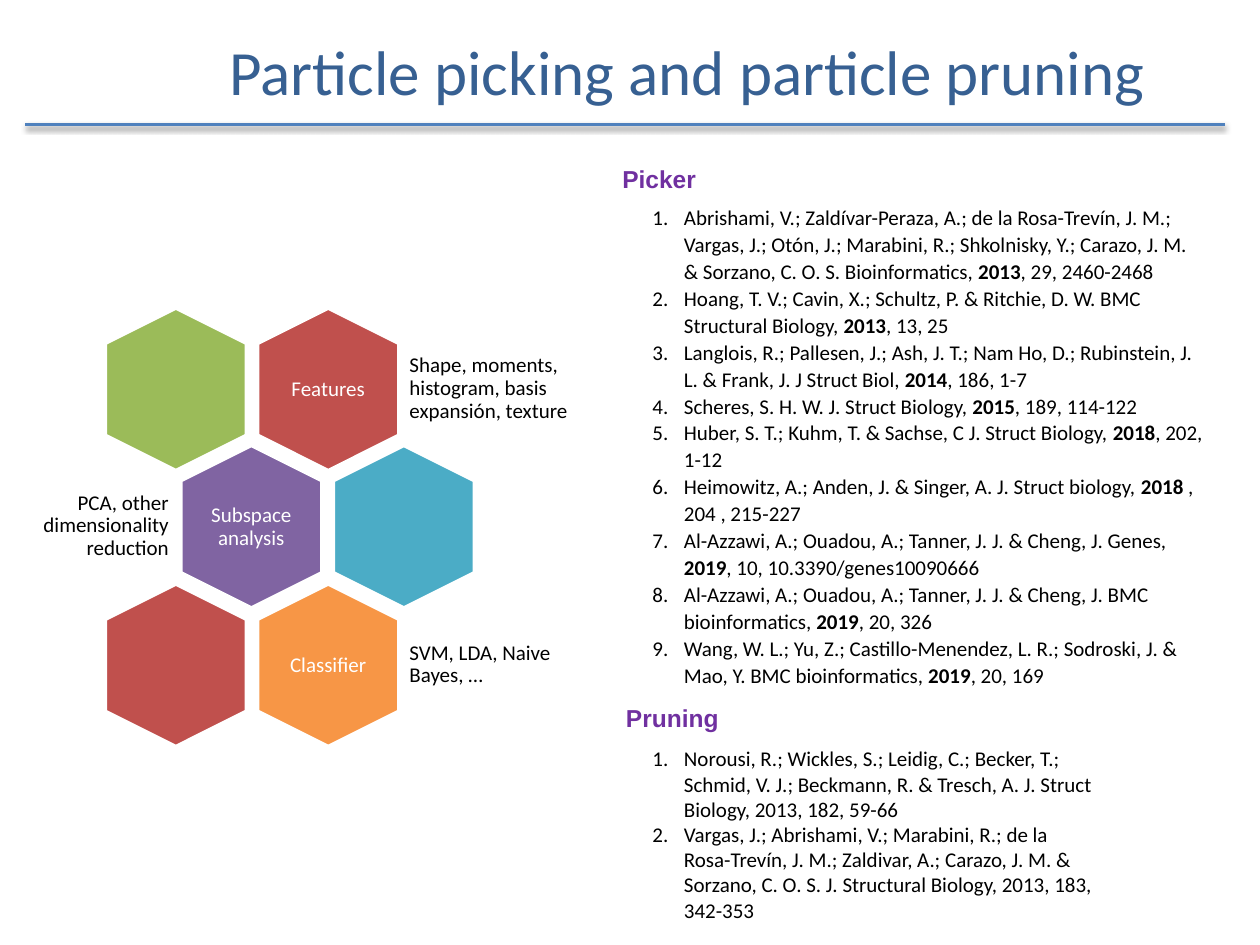
from lxml.etree import SubElement
from pptx import Presentation
from pptx.dml.color import RGBColor
from pptx.enum.shapes import MSO_CONNECTOR, MSO_SHAPE
from pptx.enum.text import MSO_ANCHOR, PP_ALIGN
from pptx.oxml.ns import qn
from pptx.util import Inches, Pt

HEXAGON_WIDTH, HEXAGON_HEIGHT = 1.29, 1.12
COLUMN_STEP = 1.21
ROWS = [(0.75, 2.53), (1.35, 3.62), (0.75, 4.72)]

# row, column, fill, name, details, details side
HEXAGONS = [
    (0, 1, "C0504D", "Features", "Shape, moments, histogram, basis expansión, texture", "right"),
    (0, 0, "9BBB59", None, None, None),
    (1, 0, "8064A2", "Subspace analysis", "PCA, other dimensionality reduction", "left"),
    (1, 1, "4BACC6", None, None, None),
    (2, 1, "F79646", "Classifier", "SVM, LDA, Naive Bayes, …", "right"),
    (2, 0, "C0504D", None, None, None),
]

PICKER_REFERENCES = [
    ("Abrishami, V.; Zaldívar-Peraza, A.; de la Rosa-Trevín, J. M.; Vargas, J.; Otón, J.; "
     "Marabini, R.; Shkolnisky, Y.; Carazo, J. M. & Sorzano, C. O. S. Bioinformatics, ",
     "2013", ", 29, 2460-2468"),
    ("Hoang, T. V.; Cavin, X.; Schultz, P. & Ritchie, D. W. BMC Structural Biology, ",
     "2013", ", 13, 25"),
    ("Langlois, R.; Pallesen, J.; Ash, J. T.; Nam Ho, D.; Rubinstein, J. L. & Frank, J. "
     "J Struct Biol, ", "2014", ", 186, 1-7"),
    ("Scheres, S. H. W. J. Struct Biology, ", "2015", ", 189, 114-122"),
    ("Huber, S. T.; Kuhm, T. & Sachse, C J. Struct Biology, ", "2018", ", 202, 1-12"),
    ("Heimowitz, A.; Anden, J. & Singer, A. J. Struct biology, ", "2018", " , 204 , 215-227"),
    ("Al-Azzawi, A.; Ouadou, A.; Tanner, J. J. & Cheng, J. Genes, ",
     "2019", ", 10, 10.3390/genes10090666"),
    ("Al-Azzawi, A.; Ouadou, A.; Tanner, J. J. & Cheng, J. BMC bioinformatics, ",
     "2019", ", 20, 326"),
    ("Wang, W. L.; Yu, Z.; Castillo-Menendez, L. R.; Sodroski, J. & Mao, Y. "
     "BMC bioinformatics, ", "2019", ", 20, 169"),
]

PRUNING_REFERENCES = [
    ("Norousi, R.; Wickles, S.; Leidig, C.; Becker, T.; Schmid, V. J.; Beckmann, R. & "
     "Tresch, A. J. Struct Biology, 2013, 182, 59-66",),
    ("Vargas, J.; Abrishami, V.; Marabini, R.; de la Rosa-Trevín, J. M.; Zaldivar, A.; "
     "Carazo, J. M. & Sorzano, C. O. S. J. Structural Biology, 2013, 183, 342-353",),
]


def color(value):
    return RGBColor.from_string(value)


class SlideBuilder:
    """Hold the style and the current slide, and add each kind of element."""

    body_font = "Calibri"
    heading_font = "Arial"
    body_size = 12

    def __init__(self, slide):
        self.slide = slide

    def style(self, paragraph, size, value, name=None):
        font = paragraph.font
        font.size, font.name = Pt(size), name or self.body_font
        font.color.rgb = color(value)

    def title(self, text, left, top, width, height):
        shape = self.slide.shapes.title
        shape.left, shape.top = Inches(left), Inches(top)
        shape.width, shape.height = Inches(width), Inches(height)
        shape.text_frame.text = text
        shape.text_frame.vertical_anchor = MSO_ANCHOR.MIDDLE
        paragraph = shape.text_frame.paragraphs[0]
        paragraph.alignment = PP_ALIGN.CENTER
        self.style(paragraph, 36, "376092")

    def rule(self, left, right, top):
        connector = self.slide.shapes.add_connector(
            MSO_CONNECTOR.STRAIGHT, Inches(left), Inches(top), Inches(right), Inches(top))
        connector.line.color.rgb = color("4F81BD")
        connector.line.width = Pt(2)
        effects = SubElement(connector._element.spPr, qn("a:effectLst"))
        shadow = SubElement(effects, qn("a:outerShdw"), blurRad=str(Pt(3.1)),
                            dist=str(Pt(1.6)), dir="5400000", rotWithShape="0")
        black = SubElement(shadow, qn("a:srgbClr"), val="000000")
        SubElement(black, qn("a:alpha"), val="38000")

    def text_box(self, left, top, width, height, wrap=True):
        box = self.slide.shapes.add_textbox(
            Inches(left), Inches(top), Inches(width), Inches(height))
        box.text_frame.word_wrap = wrap
        return box.text_frame

    def label(self, text, left, top, width, height, value, alignment):
        frame = self.text_box(left, top, width, height)
        frame.margin_left = frame.margin_right = Inches(0.05)
        frame.margin_top = frame.margin_bottom = Inches(0.05)
        frame.vertical_anchor = MSO_ANCHOR.MIDDLE
        frame.text = text
        paragraph = frame.paragraphs[0]
        paragraph.alignment = alignment
        paragraph.line_spacing = 0.9
        self.style(paragraph, self.body_size, value)

    def hexagon(self, left, top, fill, name, details, side):
        shape = self.slide.shapes.add_shape(
            MSO_SHAPE.HEXAGON, Inches(left), Inches(top),
            Inches(HEXAGON_WIDTH), Inches(HEXAGON_HEIGHT))
        shape.rotation = 90
        shape.adjustments[0] = 0.25
        shape.shadow.inherit = False
        shape.fill.solid()
        shape.fill.fore_color.rgb = color(fill)
        shape.line.color.rgb = color("FFFFFF")
        shape.line.width = Pt(2)
        if name:
            self.label(name, left + 0.26, top + 0.12, 0.77, 0.89, "FFFFFF", PP_ALIGN.CENTER)
        if side == "right":
            self.label(details, left + 1.24, top + 0.17, 1.44, 0.77, "000000", PP_ALIGN.LEFT)
        elif side == "left":
            self.label(details, left - 1.35, top + 0.17, 1.39, 0.77, "000000", PP_ALIGN.RIGHT)

    def heading(self, text, left, top, width):
        frame = self.text_box(left, top, width, 0.34, wrap=False)
        frame.text = text
        paragraph = frame.paragraphs[0]
        self.style(paragraph, 14, "7030A0", self.heading_font)
        paragraph.font.bold = True

    def references(self, entries, left, top, width, height, line_spacing):
        frame = self.text_box(left, top, width, height)
        for index, entry in enumerate(entries):
            paragraph = frame.add_paragraph() if index else frame.paragraphs[0]
            paragraph.line_spacing = line_spacing
            properties = paragraph._p.get_or_add_pPr()
            properties.set("marL", str(Inches(0.25)))
            properties.set("indent", str(Inches(-0.25)))
            SubElement(properties, qn("a:buFont"), typeface="+mj-lt")
            SubElement(properties, qn("a:buAutoNum"), type="arabicPeriod")
            self.style(paragraph, self.body_size, "000000")
            for position, text in enumerate(entry):
                run = paragraph.add_run()
                run.text = text
                if position == 1:
                    run.font.bold = True


def main():
    presentation = Presentation()
    presentation.slide_width, presentation.slide_height = Inches(10), Inches(7.5)
    builder = SlideBuilder(presentation.slides.add_slide(presentation.slide_layouts[5]))
    builder.rule(0.2, 9.72, 0.99)
    builder.title("Particle picking and particle pruning", 1.41, 0.13, 8.09, 0.85)
    for row, column, *content in HEXAGONS:
        left, top = ROWS[row]
        builder.hexagon(left + column * COLUMN_STEP, top, *content)
    builder.references(PICKER_REFERENCES, 5.08, 1.56, 4.57, 3.98, 1.07)
    builder.references(PRUNING_REFERENCES, 5.08, 5.87, 3.7, 1.51, 1.0)
    builder.heading("Picker", 4.84, 1.25, 0.79)
    builder.heading("Pruning", 4.87, 5.53, 0.94)
    presentation.save("out.pptx")


if __name__ == "__main__":
    main()
